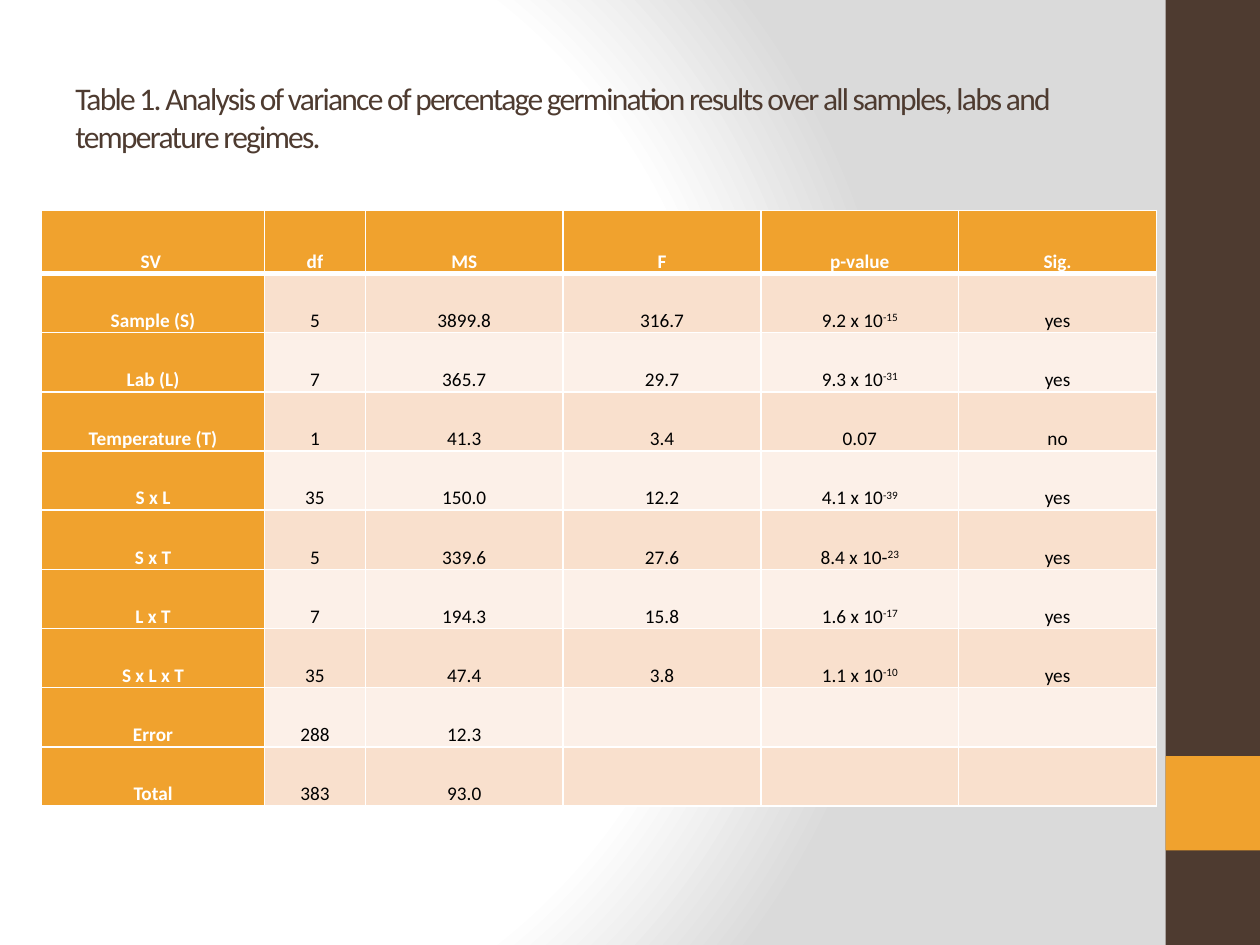
"""Builds a slide with an analysis of variance table."""
from lxml.etree import fromstring
from pptx import Presentation
from pptx.dml.color import RGBColor
from pptx.enum.shapes import MSO_SHAPE as Shape
from pptx.enum.text import MSO_ANCHOR as Anchor, PP_ALIGN as Align
from pptx.oxml.ns import nsdecls
from pptx.util import Inches, Pt

TITLE = ("Table 1. Analysis of variance of percentage germination results "
         "over all samples, labs and temperature regimes.")
ROWS = [
    ("SV ", "df", "MS", "F", "p-value", "Sig."),
    ("Sample (S)", "5", "3899.8", "316.7", "9.2 x 10^-15", "yes"),
    ("Lab (L)", "7", "365.7", "29.7", "9.3 x 10^-31", "yes"),
    ("Temperature (T)", "1", "41.3", "3.4", "0.07", "no"),
    ("S x L", "35", "150.0", "12.2", "4.1 x 10^-39", "yes"),
    ("S x T", "5", "339.6", "27.6", "8.4 x 10-^23", "yes"),
    ("L x T", "7", "194.3", "15.8", "1.6 x 10^-17", "yes"),
    ("S x L x T", "35", "47.4", "3.8", "1.1 x 10^-10", "yes"),
    ("Error", "288", "12.3", "", "", ""),
    ("Total", "383", "93.0", "", "", ""),
]
WIDTH, HEIGHT = 10, 7.5
COL_WIDTHS = [1.77, 0.8] + [1.57] * 4
ROW_HEIGHTS = [0.5] + [0.47] * 9
BROWN, ORANGE, WHITE, BLACK = "4E3B30", "F0A22E", "FFFFFF", "000000"
BANDS = ["FCF0E8", "F9E0CD"]
STOPS = [(0, WHITE), (75, WHITE), (100, "DADADA")]


def rgb(hex_text):
    return RGBColor.from_string(hex_text)


def paint(item, color):
    item.fill.solid()
    item.fill.fore_color.rgb = rgb(color)


def write(tf, text, size=11, color=BLACK, bold=False, align=Align.LEFT, spacing=0):
    """Write text, with whatever follows a caret raised."""
    p = tf.paragraphs[0]
    p.alignment = align
    for i, part in enumerate(text.split("^")):
        r = p.add_run()
        r.text = part
        r.font.name, r.font.size, r.font.bold = "Calibri", Pt(size), bold
        r.font.color.rgb = rgb(color)
        rpr = r._r.get_or_add_rPr()
        if i:
            rpr.set("baseline", "30000")
        if spacing:
            rpr.set("spc", str(spacing * 100))


def add_background(s):
    s.background.fill.solid()
    solid = s.background._cSld.bg.bgPr[0]
    stops = "".join(f'<a:gs pos="{pos * 1000}"><a:srgbClr val="{color}"/></a:gs>'
                    for pos, color in STOPS)
    solid.getparent().replace(solid, fromstring(
        f'<a:gradFill {nsdecls("a")} rotWithShape="1"><a:gsLst>{stops}</a:gsLst>'
        '<a:path path="circle"><a:fillToRect l="20000" t="50000" r="100000" b="50000"/>'
        '</a:path></a:gradFill>'))


def add_bar(s, top, height, color):
    left = WIDTH * 0.925
    sp = s.shapes.add_shape(Shape.RECTANGLE, Inches(left), Inches(top),
                            Inches(WIDTH - left), Inches(height))
    sp.shadow.inherit = False
    sp.line.fill.background()
    paint(sp, color)


def add_borders(cell, bottom):
    tc_pr = cell._tc.get_or_add_tcPr()
    for i, (side, width) in enumerate(zip("LRTB", (1, 1, 1, bottom))):
        tc_pr.insert(i, fromstring(
            f'<a:ln{side} {nsdecls("a")} w="{Pt(width)}"><a:solidFill>'
            f'<a:srgbClr val="{WHITE}"/></a:solidFill></a:ln{side}>'))


def add_anova_table(s):
    table = s.shapes.add_table(
        len(ROWS), len(COL_WIDTHS), Inches(0.33), Inches(1.67),
        Inches(sum(COL_WIDTHS)), Inches(sum(ROW_HEIGHTS))).table
    for col, width in zip(table.columns, COL_WIDTHS):
        col.width = Inches(width)
    for row, height in zip(table.rows, ROW_HEIGHTS):
        row.height = Inches(height)
    for i, values in enumerate(ROWS):
        for j, text in enumerate(values):
            cell = table.cell(i, j)
            heading = i == 0 or j == 0
            cell.vertical_anchor = Anchor.BOTTOM
            cell.margin_left = cell.margin_right = Inches(0.07)
            cell.margin_top = cell.margin_bottom = 0
            paint(cell, ORANGE if heading else BANDS[i % 2])
            add_borders(cell, bottom=1 if i else 3)
            if text:
                write(cell.text_frame, text, color=WHITE if heading else BLACK,
                      bold=heading, align=Align.CENTER)


def main():
    prs = Presentation()
    prs.slide_width, prs.slide_height = Inches(WIDTH), Inches(HEIGHT)
    s = prs.slides.add_slide(prs.slide_layouts[6])
    add_background(s)
    add_bar(s, 0, HEIGHT, BROWN)
    add_bar(s, HEIGHT * 0.8, HEIGHT * 0.1, ORANGE)
    tf = s.shapes.add_textbox(Inches(0.5), Inches(0.3), Inches(8.33), Inches(1.25)).text_frame
    tf.word_wrap = True
    tf.vertical_anchor = Anchor.MIDDLE
    write(tf, TITLE, size=18, color=BROWN, spacing=-1)
    add_anova_table(s)
    prs.save("out.pptx")


if __name__ == "__main__":
    main()
